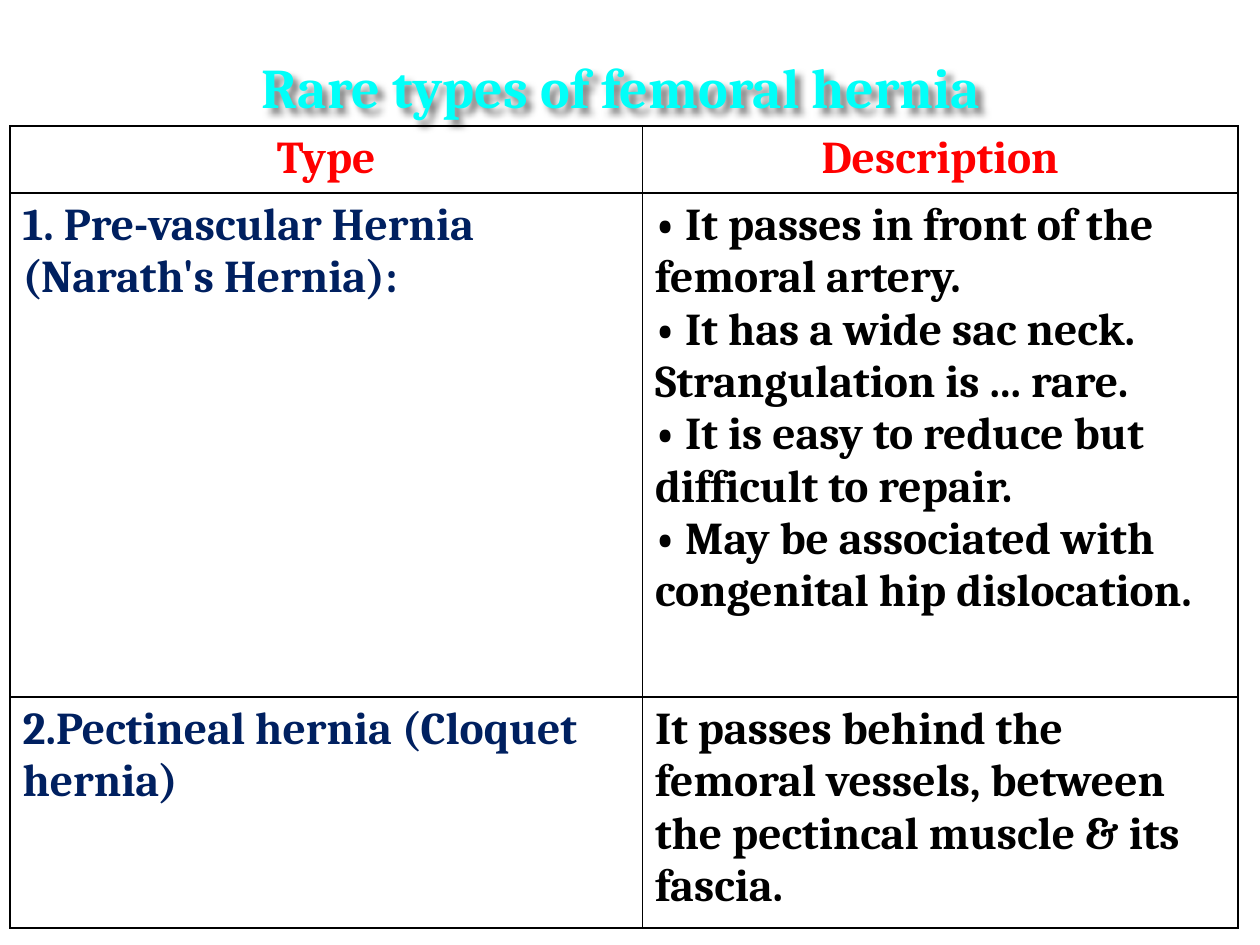
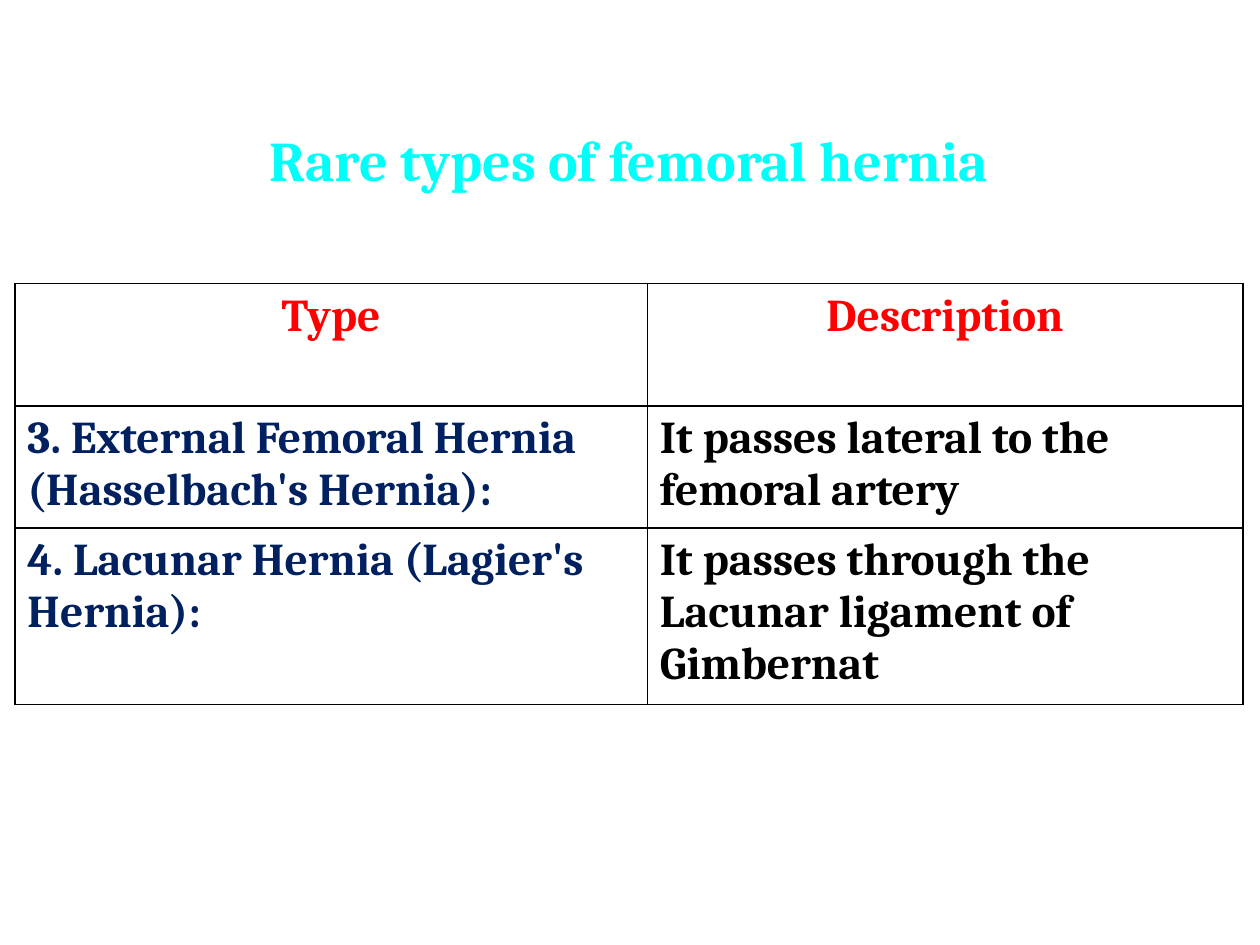
from dataclasses import dataclass

from lxml import etree
from pptx import Presentation
from pptx import util as u
from pptx.dml import color
from pptx.enum import text
from pptx.oxml import ns


@dataclass(frozen=True)
class Theme:
    font: str = "Cambria"
    title_size: int = 32
    table_size: int = 26
    title: str = "01FFF9"
    heading: str = "FF0000"
    hernia_type: str = "002060"
    description: str = "000000"
    border: str = "000000"
    shadow: str = "000000"
    border_width: int = 1


TITLE = "Rare types of femoral hernia"
HEADINGS = ("Type", "Description")
COLUMN_WIDTHS = (12.75, 12.01)


def add_element(parent, tag, **attributes):
    values = {name: str(value) for name, value in attributes.items()}
    return etree.SubElement(parent, ns.qn(tag), values)


class Deck:
    """Holds the theme, the presentation and the slide being filled."""

    def __init__(self, theme):
        self.theme = theme
        self.presentation = Presentation()
        self.presentation.slide_width = u.Cm(25.4)
        self.presentation.slide_height = u.Cm(19.05)
        self.slide = None

    def new_slide(self):
        self.slide = self.presentation.slides.add_slide(self.presentation.slide_layouts[6])

    def fill_text(self, frame, lines, size, rgb, centred=False):
        """Fill a text frame with one paragraph per line."""
        frame.word_wrap = True
        font_values = {"name": self.theme.font, "size": u.Pt(size), "bold": True}
        for index, line in enumerate(lines):
            paragraph = frame.add_paragraph() if index else frame.paragraphs[0]
            paragraph.alignment = text.PP_ALIGN.CENTER if centred else text.PP_ALIGN.LEFT
            run = paragraph.add_run()
            run.text = line
            for name, value in font_values.items():
                setattr(run.font, name, value)
            run.font.color.rgb = color.RGBColor.from_string(rgb)

    def title(self, left, top, width, shadowed=False):
        shape = self.slide.shapes.add_textbox(u.Cm(left), u.Cm(top), u.Cm(width), u.Cm(1.6))
        self.fill_text(shape.text_frame, [TITLE], self.theme.title_size, self.theme.title, True)
        if shadowed:
            self.shadow(shape)

    def shadow(self, shape):
        """Cast a soft shadow to the lower right."""
        effects = add_element(shape.element.spPr, "a:effectLst")
        outer = add_element(effects, "a:outerShdw", blurRad=u.Pt(4), dist=u.Pt(4),
                            dir=45 * 60000, algn="tl", rotWithShape=0)
        tint = add_element(outer, "a:srgbClr", val=self.theme.shadow)
        add_element(tint, "a:alpha", val=50000)

    def border(self, cell):
        properties = cell._tc.get_or_add_tcPr()
        for side in ("a:lnL", "a:lnR", "a:lnT", "a:lnB"):
            line = add_element(properties, side, w=u.Pt(self.theme.border_width))
            fill = add_element(line, "a:solidFill")
            add_element(fill, "a:srgbClr", val=self.theme.border)

    def table(self, left, top, row_heights, hernias):
        """Add a headed table of hernia types and their description lines."""
        frame = self.slide.shapes.add_table(
            len(row_heights), len(COLUMN_WIDTHS), u.Cm(left), u.Cm(top),
            u.Cm(sum(COLUMN_WIDTHS)), u.Cm(sum(row_heights)))
        table = frame.table
        table.first_row = table.horz_banding = False
        for column, width in zip(table.columns, COLUMN_WIDTHS):
            column.width = u.Cm(width)
        for row, height in zip(table.rows, row_heights):
            row.height = u.Cm(height)

        body_colours = (self.theme.hernia_type, self.theme.description)
        rows = [[[heading] for heading in HEADINGS]]
        rows += [[[name], description] for name, description in hernias]
        for row_index, row in enumerate(rows):
            for column_index, lines in enumerate(row):
                cell = table.cell(row_index, column_index)
                is_heading = row_index == 0
                rgb = self.theme.heading if is_heading else body_colours[column_index]
                self.border(cell)
                cell.fill.background()
                self.fill_text(cell.text_frame, lines, self.theme.table_size, rgb, is_heading)


def main():
    deck = Deck(Theme())

    deck.new_slide()
    deck.title(4.65, 0.94, 15.75, shadowed=True)
    deck.table(0.2, 2.54, (1.35, 10.16, 4.65), [
        ("1. Pre-vascular Hernia (Narath's Hernia):", [
            "• It passes in front of the femoral artery.",
            "• It has a wide sac neck. Strangulation is ... rare.",
            "• It is easy to reduce but difficult to repair.",
            "• May be associated with congenital hip dislocation.",
        ]),
        ("2.Pectineal hernia (Cloquet hernia)", [
            "It passes behind the femoral vessels, between the pectincal muscle & its fascia.",
        ]),
    ])

    deck.new_slide()
    deck.table(0.3, 5.72, (2.46, 2.46, 3.56), [
        ("3. External Femoral Hernia (Hasselbach's Hernia):",
         ["It passes lateral to the femoral artery"]),
        ("4. Lacunar Hernia (Lagier's Hernia):",
         ["It passes through the Lacunar ligament of Gimbernat"]),
    ])
    deck.title(2.74, 2.41, 19.89)

    deck.presentation.save("out.pptx")


if __name__ == "__main__":
    main()
